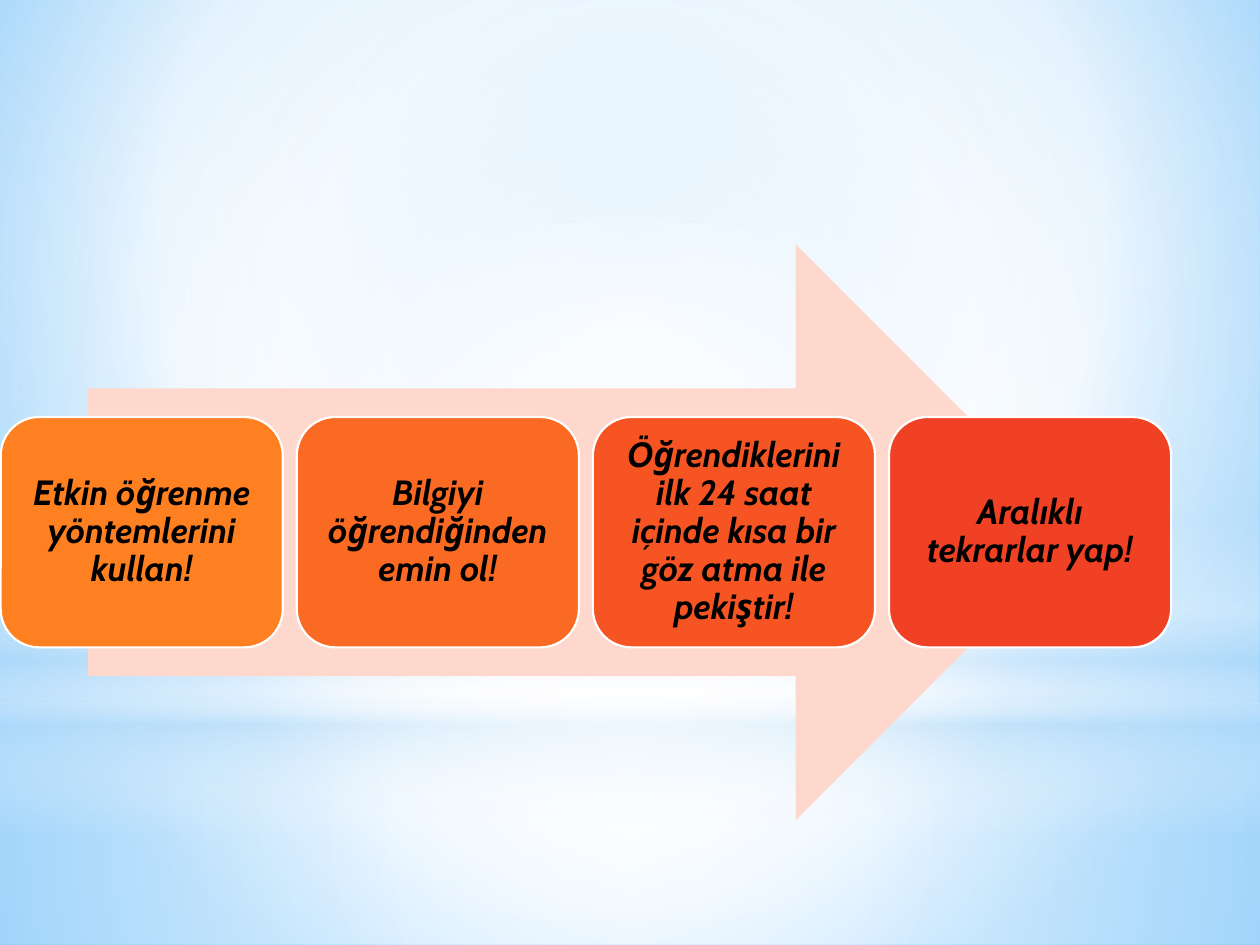
from dataclasses import dataclass

from lxml import etree
from pptx import Presentation
from pptx.dml.color import RGBColor
from pptx.enum.shapes import MSO_SHAPE
from pptx.enum.text import MSO_ANCHOR, PP_ALIGN
from pptx.oxml.ns import qn
from pptx.util import Pt

RECTANGLE = MSO_SHAPE.RECTANGLE
OVAL = MSO_SHAPE.OVAL
RIGHT_ARROW = MSO_SHAPE.RIGHT_ARROW
ROUNDED = MSO_SHAPE.ROUNDED_RECTANGLE
MIDDLE = MSO_ANCHOR.MIDDLE
CENTER = PP_ALIGN.CENTER

PAGE_WIDTH, PAGE_HEIGHT = 720, 540
HORIZON = 401.8
CENTRE_FOCUS = (50, 50, 50, 50)


@dataclass(frozen=True)
class Theme:
    font: str = "Cabin"
    text_size: float = 20
    text: str = "000000"
    white: str = "FFFFFF"
    haze: str = "B4DCFA"
    sky: str = "9ED5FF"
    deep_sky: str = "5BB9FF"
    arrow: str = "FFD8CD"
    steps: tuple = ("FF8021", "FA6A22", "F65523", "F14124")
    outline: float = 1.25
    inset: float = 6


def set_gradient(parent, stops, focus=None):
    """Replace the solid fill; stops are (position, colour, opacity) in percent.

    Without a focus rectangle the gradient runs straight down.
    """
    gradient = etree.Element(qn("a:gradFill"), rotWithShape="1")
    stop_list = etree.SubElement(gradient, qn("a:gsLst"))
    for position, colour, opacity in stops:
        stop = etree.SubElement(stop_list, qn("a:gs"), pos=str(position * 1000))
        tint = etree.SubElement(stop, qn("a:srgbClr"), val=colour)
        if opacity < 100:
            etree.SubElement(tint, qn("a:alpha"), val=str(opacity * 1000))
    if focus:
        radial = etree.SubElement(gradient, qn("a:path"), path="circle")
        edges = {side: str(value * 1000) for side, value in zip("ltrb", focus)}
        etree.SubElement(radial, qn("a:fillToRect"), **edges)
    else:
        etree.SubElement(gradient, qn("a:lin"), ang="5400000", scaled="0")
    parent.replace(parent.find(qn("a:solidFill")), gradient)


class SlideBuilder:
    def __init__(self, slide, theme):
        self.slide = slide
        self.theme = theme

    def background(self, stops, focus):
        self.slide.background.fill.solid()
        set_gradient(self.slide.element.find(".//" + qn("p:bgPr")), stops, focus)

    def shape(self, kind, bounds, colour):
        shape = self.slide.shapes.add_shape(kind, *map(Pt, bounds))
        shape.shadow.inherit = False
        shape.fill.solid()
        shape.fill.fore_color.rgb = RGBColor.from_string(colour)
        shape.line.fill.background()
        return shape

    def glow(self, kind, bounds, stops, focus=None):
        shape = self.shape(kind, bounds, self.theme.white)
        set_gradient(shape.element.spPr, stops, focus)

    def step(self, bounds, colour, text):
        theme = self.theme
        box = self.shape(ROUNDED, bounds, colour)
        box.line.color.rgb = RGBColor.from_string(theme.white)
        box.line.width = Pt(theme.outline)
        frame = box.text_frame
        frame.word_wrap = True
        frame.vertical_anchor = MIDDLE
        frame.margin_left = frame.margin_right = Pt(theme.inset)
        frame.margin_top = frame.margin_bottom = Pt(theme.inset)
        para = frame.paragraphs[0]
        para.alignment = CENTER
        para.line_spacing = 0.9
        span = para.add_run()
        span.text = text
        span.font.name = theme.font
        span.font.size = Pt(theme.text_size)
        span.font.bold = span.font.italic = True
        span.font.color.rgb = RGBColor.from_string(theme.text)


def draw_sky(builder):
    theme = builder.theme
    white, haze = theme.white, theme.haze
    builder.background(
        [(0, theme.sky, 100), (60, white, 100), (100, theme.deep_sky, 100)],
        (20, 10, 20, 60))
    builder.glow(RECTANGLE, (0, HORIZON, PAGE_WIDTH, PAGE_HEIGHT - HORIZON),
                 [(0, white, 91), (37, white, 76), (100, haze, 79)], CENTRE_FOCUS)
    builder.glow(RECTANGLE, (0, 0, PAGE_WIDTH, HORIZON),
                 [(0, white, 89), (48, white, 62), (100, haze, 79)], CENTRE_FOCUS)
    builder.glow(RECTANGLE, (0, 296.6, PAGE_WIDTH, 180),
                 [(0, white, 0), (29, white, 30), (45, haze, 40),
                  (55, white, 26), (65, haze, 60), (100, white, 0)])
    builder.glow(OVAL, (0, 126, PAGE_WIDTH, HORIZON),
                 [(0, white, 100), (56, white, 0)], CENTRE_FOCUS)


def draw_steps(builder):
    theme = builder.theme
    texts = (
        "Etkin öğrenme yöntemlerini kullan!",
        "Bilgiyi öğrendiğinden emin ol!",
        "Öğrendiklerini ilk 24 saat içinde kısa bir göz atma ile pekiştir!",
        "Aralıklı tekrarlar yap!",
    )
    left, top, width, height, pitch = 0.4, 238.3, 161.2, 131.6, 169.2
    builder.shape(RIGHT_ARROW, (50.4, 139.7, 568.8, 329), theme.arrow)
    for index, (colour, text) in enumerate(zip(theme.steps, texts)):
        builder.step((left + index * pitch, top, width, height), colour, text)


def main():
    deck = Presentation()
    deck.slide_width, deck.slide_height = Pt(PAGE_WIDTH), Pt(PAGE_HEIGHT)
    page = deck.slides.add_slide(deck.slide_layouts[6])
    builder = SlideBuilder(page, Theme())
    draw_sky(builder)
    draw_steps(builder)
    deck.save("out.pptx")


if __name__ == "__main__":
    main()
